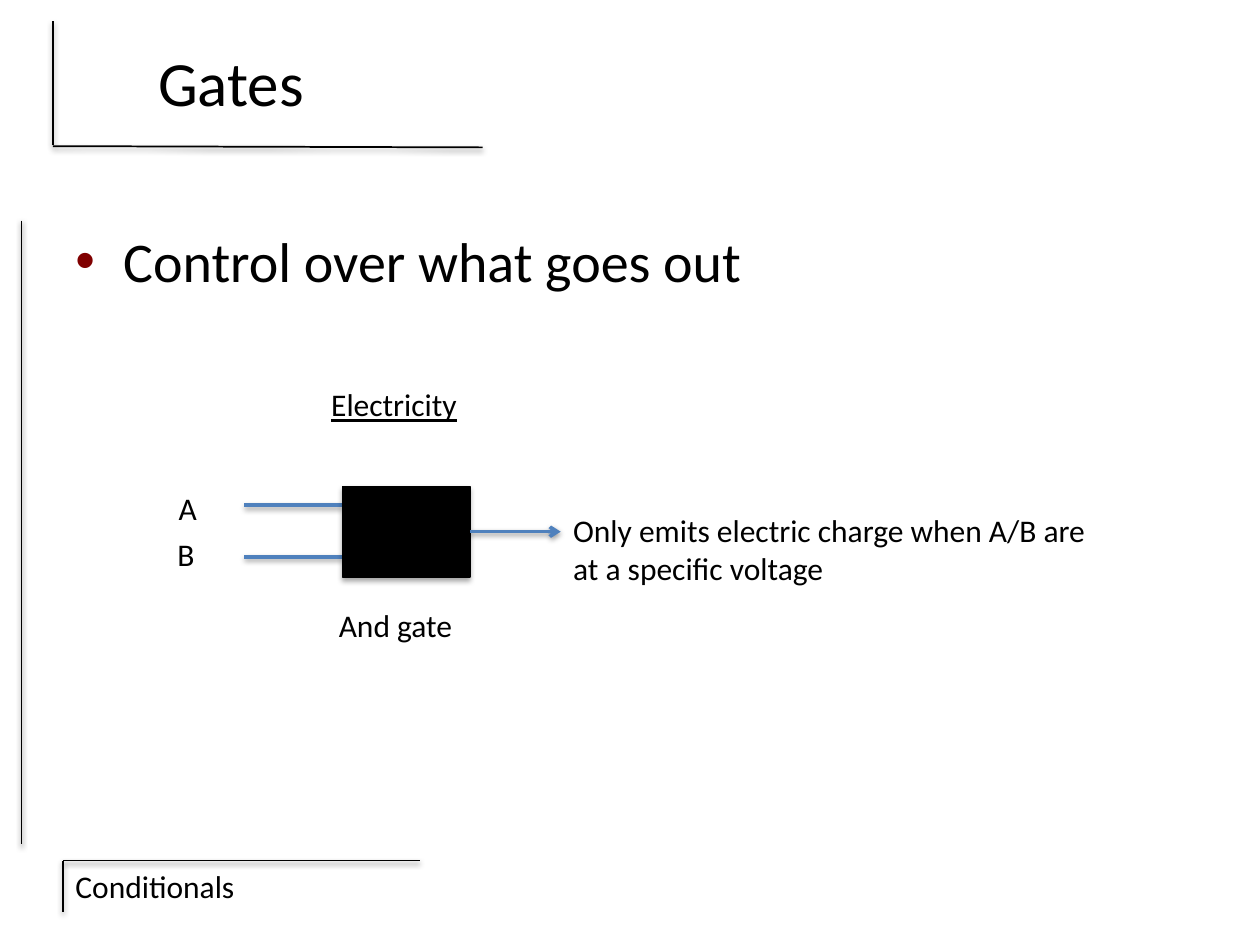
from lxml import etree
from pptx import Presentation
from pptx.dml.color import RGBColor
from pptx.enum.shapes import MSO_CONNECTOR, MSO_SHAPE
from pptx.enum.text import MSO_ANCHOR, PP_ALIGN
from pptx.oxml.ns import qn
from pptx.util import Inches, Pt

STRAIGHT = MSO_CONNECTOR.STRAIGHT
RECTANGLE = MSO_SHAPE.RECTANGLE
TOP, MIDDLE = MSO_ANCHOR.TOP, MSO_ANCHOR.MIDDLE
LEFT, CENTER = PP_ALIGN.LEFT, PP_ALIGN.CENTER

FONT = "Calibri"
COLORS = {"ink": "000000", "wire": "4F81BD", "bullet": "800000"}


def color(name):
    return RGBColor.from_string(COLORS[name])


def add_child(parent, tag, **attributes):
    child = etree.SubElement(parent, qn(tag))
    for key, value in attributes.items():
        child.set(key, str(value))
    return child


def add_shadow(shape, opacity, distance):
    """Soft shadow falling straight down; call after fill and line are set."""
    effects = add_child(shape._element.spPr, "a:effectLst")
    shadow = add_child(effects, "a:outerShdw", blurRad=Pt(3.1), dist=Pt(distance),
                       dir=90 * 60000, rotWithShape=0)
    ink = add_child(shadow, "a:srgbClr", val=COLORS["ink"])
    add_child(ink, "a:alpha", val=opacity * 1000)


def add_line(page, start, end, line_color="ink", width=1, arrow=False):
    points = [Inches(value) for value in (*start, *end)]
    line = page.shapes.add_connector(STRAIGHT, *points)
    line.line.color.rgb = color(line_color)
    line.line.width = Pt(width)
    if arrow:
        add_child(line.line._get_or_add_ln(), "a:tailEnd", type="arrow")
    add_shadow(line, 38, 1.6)


def add_text(page, area, text, size=18, align=LEFT, anchor=TOP, wrap=False, underline=False):
    box = page.shapes.add_textbox(*[Inches(value) for value in area])
    frame = box.text_frame
    frame.word_wrap = wrap
    frame.vertical_anchor = anchor
    frame.text = text
    for paragraph in frame.paragraphs:
        paragraph.alignment = align
        for span in paragraph.runs:
            span.font.name = FONT
            span.font.size = Pt(size)
            span.font.color.rgb = color("ink")
            if underline:
                span.font.underline = True
    return box


def add_bullet(paragraph, indent):
    properties = paragraph._p.get_or_add_pPr()
    properties.set("marL", str(Inches(indent)))
    properties.set("indent", str(-Inches(indent)))
    before = add_child(properties, "a:spcBef")
    add_child(before, "a:spcPct", val=20000)
    add_child(add_child(properties, "a:buClr"), "a:srgbClr", val=COLORS["bullet"])
    add_child(properties, "a:buFont", typeface="Arial")
    add_child(properties, "a:buChar", char="•")


def add_gate(page, area):
    gate = page.shapes.add_shape(RECTANGLE, *[Inches(value) for value in area])
    gate.fill.solid()
    gate.fill.fore_color.rgb = color("ink")
    gate.line.color.rgb = color("ink")
    gate.line.width = Pt(0.75)
    add_shadow(gate, 35, 1.8)


def main():
    deck = Presentation()
    deck.slide_width, deck.slide_height = Inches(10), Inches(7.5)
    page = deck.slides.add_slide(deck.slide_layouts[6])

    # Frame lines and footer
    add_line(page, (3.33, 6.83), (0.5, 6.83))
    add_line(page, (0.17, 1.75), (0.17, 6.7))
    add_text(page, (0.5, 6.83, 2.42, 0.4), "Conditionals", wrap=True)
    add_line(page, (0.5, 6.83), (0.5, 7.24))
    add_line(page, (3.83, 1.17), (0.42, 1.16))
    add_line(page, (0.42, 0.17), (0.42, 1.15))

    # Title and main point
    add_text(page, (0.5, 0.17, 2.67, 0.95), "Gates", 36, CENTER, MIDDLE, wrap=True)
    body = add_text(page, (0.5, 1.75, 9, 4.95), "Control over what goes out", 32, wrap=True)
    add_bullet(body.text_frame.paragraphs[0], 0.38)

    # Gate with two inputs and one output
    gate_left, gate_top, gate_width, gate_height = 2.72, 3.86, 1.01, 0.72
    gate_right = gate_left + gate_width
    output_y = gate_top + gate_height / 2
    for input_y in (4.01, 4.42):
        add_line(page, (1.94, input_y), (gate_left, input_y), "wire", 2)
    add_gate(page, (gate_left, gate_top, gate_width, gate_height))
    add_line(page, (gate_right, output_y), (4.45, output_y), "wire", 2, arrow=True)

    # Diagram labels
    add_text(page, (2.53, 3.01, 1.21, 0.4), "Electricity", underline=True)
    add_text(page, (4.45, 4.01, 4.31, 0.71),
             "Only emits electric charge when A/B are\nat a specific voltage")
    add_text(page, (2.59, 4.76, 1.15, 0.4), "And gate")
    add_text(page, (1.32, 3.83, 0.35, 0.4), "A")
    add_text(page, (1.31, 4.2, 0.34, 0.4), "B")

    deck.save("out.pptx")


if __name__ == "__main__":
    main()
